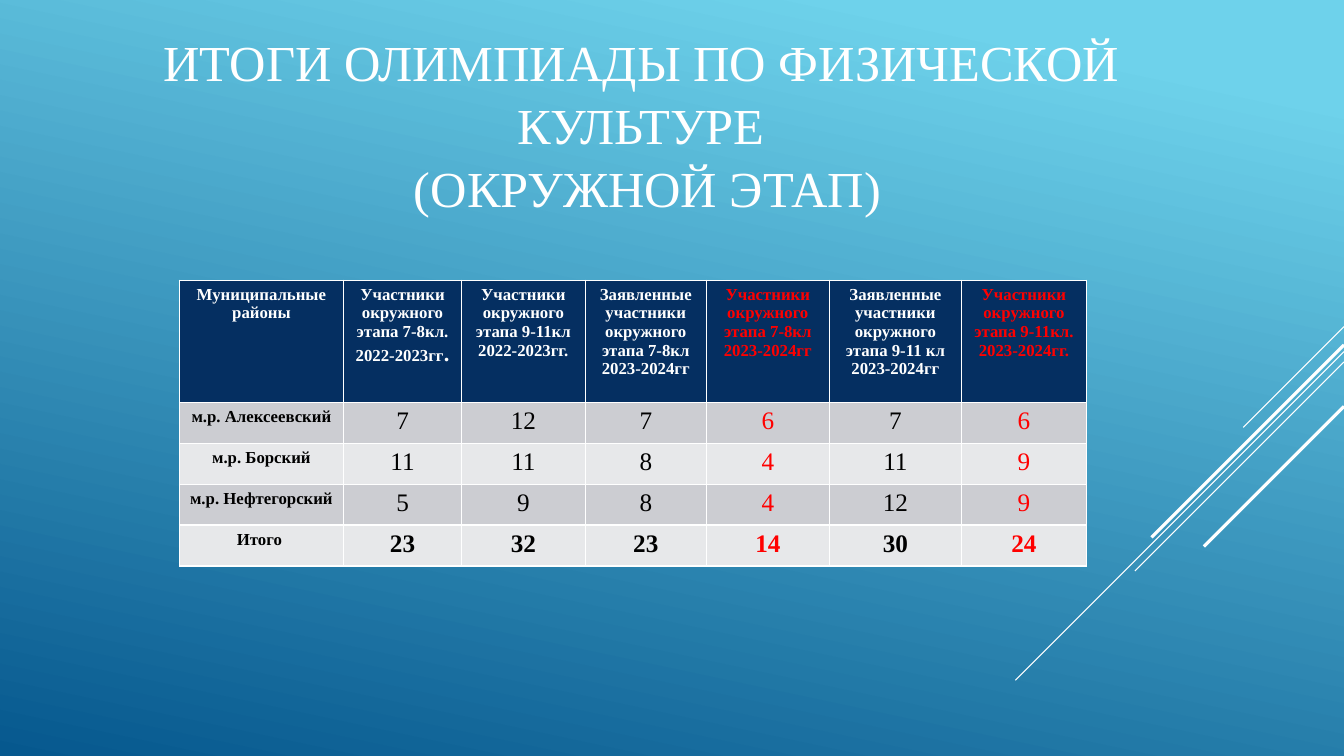
from lxml.etree import SubElement
from pptx import Presentation
from pptx.dml.color import RGBColor
from pptx.enum.shapes import MSO_CONNECTOR
from pptx.enum.text import MSO_ANCHOR, PP_ALIGN
from pptx.oxml.ns import qn
from pptx.util import Cm, Pt

WHITE = RGBColor(0xFF, 0xFF, 0xFF)
BLACK = RGBColor(0, 0, 0)
RED = RGBColor(0xFF, 0, 0)
NAVY = RGBColor(0x05, 0x2F, 0x61)
GRAY = RGBColor(0xCC, 0xCD, 0xD2)
PALE = RGBColor(0xE7, 0xE8, 0xEA)
SKY = RGBColor(0x6E, 0xD2, 0xEB)
DEEP = RGBColor(0x06, 0x58, 0x8E)

WIDE, HIGH = 33.87, 19.05
TITLE = ["ИТОГИ ОЛИМПИАДЫ ПО ФИЗИЧЕСКОЙ КУЛЬТУРЕ", " (ОКРУЖНОЙ ЭТАП)"]
RAYS = [(8.23, 2.54, 0.75), (8.86, 8.28, 0.75), (9.12, 5.27, 0.75),
        (8.69, 4.85, 2.25), (10.24, 3.53, 2.25)]
COLS = [4.14, 2.97, 3.12, 3.05, 3.1, 3.33, 3.15]
ROWS = [3.08, 1.03, 1.03, 1.03, 1.03]
MARKED = (4, 6)
DATA = [
    ["Муниципальные районы",
     "Участники окружного этапа 7-8кл.\n2022-2023гг",
     "Участники окружного этапа 9-11кл\n2022-2023гг.",
     "Заявленные участники окружного этапа 7-8кл 2023-2024гг",
     "Участники окружного этапа 7-8кл 2023-2024гг",
     "Заявленные участники окружного этапа 9-11 кл 2023-2024гг",
     "Участники окружного этапа 9-11кл.\n2023-2024гг."],
    ["м.р. Алексеевский", 7, 12, 7, 6, 7, 6],
    ["м.р. Борский", 11, 11, 8, 4, 11, 9],
    ["м.р. Нефтегорский", 5, 9, 8, 4, 12, 9],
    ["Итого ", 23, 32, 23, 14, 30, 24],
]


def style(run, size, color, bold=False):
    """Format one run of text."""
    look = {"name": "Times New Roman", "size": Pt(size), "bold": bold}
    for key, value in look.items():
        setattr(run.font, key, value)
    run.font.color.rgb = color


def paint(slide):
    """Fill the background with a gradient."""
    fill = slide.background.fill
    fill.gradient()
    fill.gradient_angle = 258
    for stop, place, color in zip(fill.gradient_stops, (0.1, 1), (SKY, DEEP)):
        stop.position = place
        stop.color.rgb = color


def add_ray(slide, top, run, width):
    """Draw a diagonal line down from the right edge."""
    ray = slide.shapes.add_connector(
        MSO_CONNECTOR.STRAIGHT, Cm(WIDE), Cm(top), Cm(WIDE - run), Cm(top + run))
    ray.line.color.rgb = WHITE
    ray.line.width = Pt(width)
    SubElement(ray._element.spPr, qn("a:effectLst"))


def add_title(slide):
    """Place and format the title."""
    title = slide.shapes.title
    box = {"left": 1.9, "top": 0.66, "width": 28.52, "height": 4.88}
    for key, value in box.items():
        setattr(title, key, Cm(value))
    frame = title.text_frame
    frame.word_wrap = True
    frame.vertical_anchor = MSO_ANCHOR.MIDDLE
    para = frame.paragraphs[0]
    para.alignment = PP_ALIGN.CENTER
    para.line_spacing = 1.04
    for index, line in enumerate(TITLE):
        if index:
            para.add_line_break()
        run = para.add_run()
        run.text = line
        style(run, 36, WHITE)


def edge(cell):
    """Give a cell thin white borders."""
    props = cell._tc.get_or_add_tcPr()
    for side in ("lnL", "lnR", "lnT", "lnB"):
        line = SubElement(props, qn(f"a:{side}"), w=str(Pt(1)))
        fill = SubElement(line, qn("a:solidFill"))
        SubElement(fill, qn("a:srgbClr"), val=str(WHITE))


def fill_cell(cell, text, back, size, color, bold):
    """Write and format one table cell."""
    edge(cell)
    cell.fill.solid()
    cell.fill.fore_color.rgb = back
    cell.text = str(text)
    for para in cell.text_frame.paragraphs:
        para.alignment = PP_ALIGN.CENTER
        for run in para.runs:
            style(run, size, color, bold)


def add_grid(slide):
    """Build the table of results."""
    grid = slide.shapes.add_table(
        len(ROWS), len(COLS), Cm(4.52), Cm(7.06), Cm(sum(COLS)), Cm(sum(ROWS))).table
    for col, width in zip(grid.columns, COLS):
        col.width = Cm(width)
    for row, height in zip(grid.rows, ROWS):
        row.height = Cm(height)
    for r, line in enumerate(DATA):
        head, total = r == 0, r == len(DATA) - 1
        back = NAVY if head else (PALE, GRAY)[r % 2]
        for c, text in enumerate(line):
            label = head or c == 0
            color = RED if c in MARKED else WHITE if head else BLACK
            fill_cell(grid.cell(r, c), text, back, 12 if label else 18,
                      color, label or total)
    dot = grid.cell(0, 1).text_frame.paragraphs[-1].add_run()
    dot.text = "."
    style(dot, 16, WHITE, True)


def main():
    """Create and save the slide."""
    deck = Presentation()
    deck.slide_width, deck.slide_height = Cm(WIDE), Cm(HIGH)
    slide = deck.slides.add_slide(deck.slide_layouts[5])
    paint(slide)
    for ray in RAYS:
        add_ray(slide, *ray)
    add_title(slide)
    add_grid(slide)
    deck.save("out.pptx")


if __name__ == "__main__":
    main()
